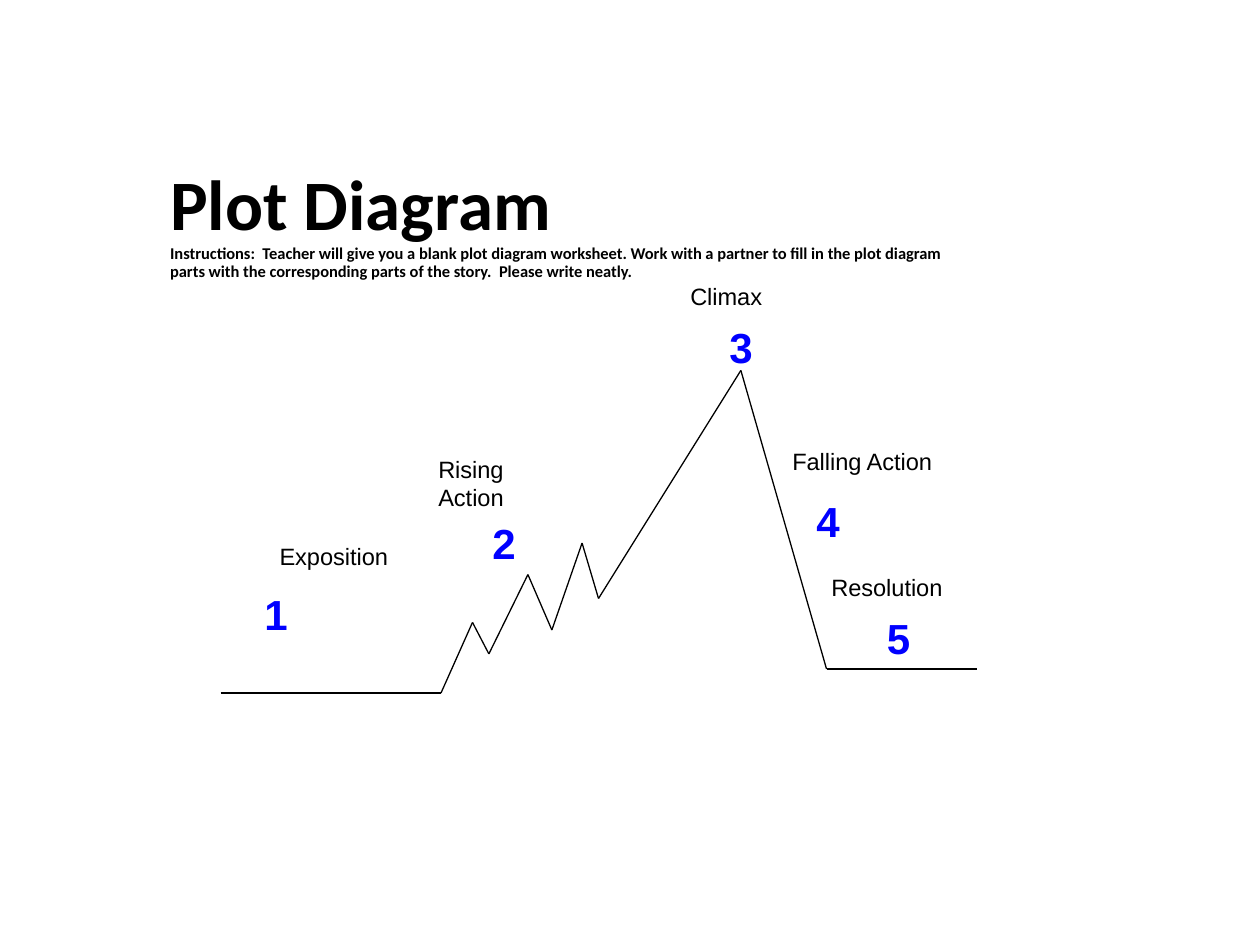
import itertools

import pptx
import pptx.dml.color
import pptx.enum.shapes
import pptx.enum.text
import pptx.oxml.ns
import pptx.util
from lxml import etree

Inches = pptx.util.Inches
Pt = pptx.util.Pt


def color(value):
    return pptx.dml.color.RGBColor.from_string(value)


class PlotSlide:
    black = "000000"
    blue = "0000FF"
    label_font = "Arial"
    title_font = "Calibri"

    def __init__(self, presentation):
        self.slide = presentation.slides.add_slide(presentation.slide_layouts[5])

    def format_run(self, run, size, name, fill, bold):
        run.font.size = Pt(size)
        run.font.name = name
        run.font.bold = bold
        run.font.color.rgb = color(fill)

    def title(self, heading, instructions, left, top, width, height):
        shape = self.slide.shapes.title
        shape.left, shape.top = Inches(left), Inches(top)
        shape.width, shape.height = Inches(width), Inches(height)
        frame = shape.text_frame
        frame.text = heading + "\v" + instructions
        frame.word_wrap = True
        frame.auto_size = pptx.enum.text.MSO_AUTO_SIZE.NONE
        frame.vertical_anchor = pptx.enum.text.MSO_ANCHOR.MIDDLE
        paragraph = frame.paragraphs[0]
        paragraph.alignment = pptx.enum.text.PP_ALIGN.LEFT
        paragraph.line_spacing = 0.9
        for run, size in zip(paragraph.runs, (40.5, 9.4)):
            self.format_run(run, size, self.title_font, self.black, True)

    def line(self, shapes, start, end):
        connector = shapes.add_connector(
            pptx.enum.shapes.MSO_CONNECTOR.STRAIGHT,
            *(Inches(value) for value in start + end),
        )
        connector.line.color.rgb = color(self.black)
        connector.line.width = Pt(0.75)
        properties = connector._element.spPr
        etree.SubElement(properties, pptx.oxml.ns.qn("a:effectLst"))

    def polylines(self, *paths):
        group = self.slide.shapes.add_group_shape()
        for path in paths:
            for start, end in itertools.pairwise(path):
                self.line(group.shapes, start, end)

    def text(self, content, left, top, width, height, size, fill, bold):
        box = self.slide.shapes.add_textbox(
            Inches(left), Inches(top), Inches(width), Inches(height)
        )
        frame = box.text_frame
        frame.text = content
        frame.word_wrap = True
        frame.auto_size = pptx.enum.text.MSO_AUTO_SIZE.SHAPE_TO_FIT_TEXT
        self.format_run(
            frame.paragraphs[0].runs[0], size, self.label_font, fill, bold
        )

    def number(self, content, left, top, width):
        self.text(content, left, top, width, 0.5, 24, self.blue, True)

    def label(self, content, left, top, width=1.25, height=0.33):
        self.text(content, left, top, width, height, 13.5, self.black, False)


def main():
    presentation = pptx.Presentation()
    presentation.slide_width = Inches(10)
    presentation.slide_height = Inches(7.5)
    plot = PlotSlide(presentation)

    plot.title(
        "Plot Diagram",
        "Instructions:  Teacher will give you a blank plot diagram worksheet. "
        "Work with a partner to fill in the plot diagram parts with the "
        "corresponding parts of the story.  Please write neatly.",
        1.25, 1.24, 6.47, 1.09,
    )

    climax = (5.88, 2.94)
    resolution = (6.56, 5.31)
    rising_path = [
        (1.75, 5.5), (3.5, 5.5), (3.75, 4.94), (3.88, 5.19), (4.19, 4.56),
        (4.38, 5), (4.62, 4.31), (4.75, 4.75), climax,
    ]
    plot.line(plot.slide.shapes, climax, resolution)
    plot.polylines(rising_path, [resolution, (7.75, 5.31)])

    plot.number("2", 3.81, 4.06, 0.5)
    plot.number("1", 2, 4.62, 0.62)
    plot.number("3", 5.69, 2.5, 0.38)
    plot.number("4", 6.38, 3.88, 0.38)
    plot.number("5", 6.94, 4.81, 0.44)

    plot.label("Exposition", 2.12, 4.25)
    plot.label("Rising Action", 3.38, 3.56, height=0.56)
    plot.label("Climax", 5.38, 2.19)
    plot.label("Falling Action", 6.19, 3.5, width=1.56)
    plot.label("Resolution", 6.5, 4.5)

    presentation.save("out.pptx")


if __name__ == "__main__":
    main()
